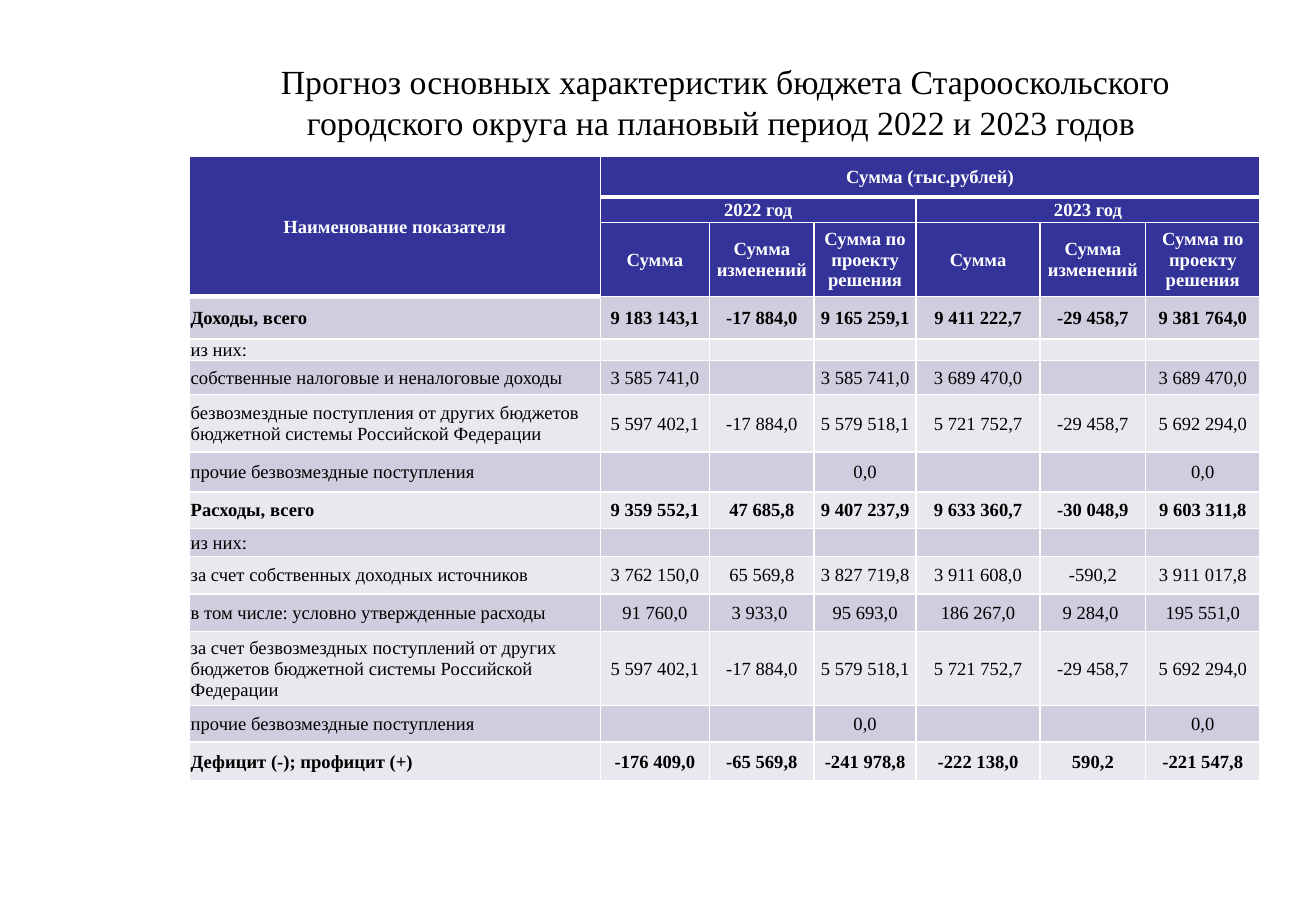
from lxml.etree import SubElement
from pptx import Presentation
from pptx.dml.color import RGBColor
from pptx.enum.text import MSO_ANCHOR, PP_ALIGN
from pptx.oxml.ns import qn
from pptx.util import Inches, Pt

FONT = "Times New Roman"
COLORS = {
    "header": "333399",
    "dark_band": "CECEDE",
    "light_band": "E8E8EF",
    "white": "FFFFFF",
    "black": "000000",
}
TITLE = ("Прогноз основных характеристик бюджета Старооскольского "
         "городского округа на плановый период 2022 и 2023 годов ")
COLUMN_WIDTHS = [3.38, 0.9, 0.86, 0.84, 1.02, 0.87, 0.94]
ROW_HEIGHTS = [0.33, 0.21, 0.61, 0.35, 0.06, 0.28, 0.47, 0.33,
               0.3, 0.23, 0.31, 0.31, 0.61, 0.3, 0.32]
YEAR_HEADINGS = ["Сумма", "Сумма изменений", "Сумма по проекту решения"]
HEADER_ROWS = [
    ["Наименование показателя", "Сумма (тыс.рублей)", "", "", "", "", ""],
    ["", "2022 год", "", "", "2023 год", "", ""],
    [""] + YEAR_HEADINGS * 2,
]
SUBHEADING = ["из них:"] + [""] * 6
OTHER_GRANTS = ["прочие безвозмездные поступления", "", "", "0,0", "", "", "0,0"]
GRANT_AMOUNTS = ["5 597 402,1", "-17 884,0", "5 579 518,1",
                 "5 721 752,7", "-29 458,7", "5 692 294,0"]
BUDGET_ROWS = [
    ["Доходы, всего", "9 183 143,1", "-17 884,0", "9 165 259,1",
     "9 411 222,7", "-29 458,7", "9 381 764,0"],
    SUBHEADING,
    ["собственные налоговые и неналоговые доходы", "3 585 741,0", "",
     "3 585 741,0", "3 689 470,0", "", "3 689 470,0"],
    ["безвозмездные поступления от других бюджетов бюджетной системы "
     "Российской Федерации"] + GRANT_AMOUNTS,
    OTHER_GRANTS,
    ["Расходы, всего", "9 359 552,1", "47 685,8", "9 407 237,9",
     "9 633 360,7", "-30 048,9", "9 603 311,8"],
    SUBHEADING,
    ["за счет собственных доходных источников", "3 762 150,0", "65 569,8",
     "3 827 719,8", "3 911 608,0", "-590,2", "3 911 017,8"],
    ["в том числе: условно утвержденные расходы", "91 760,0", "3 933,0 ",
     "95 693,0", "186 267,0", "9 284,0 ", "195 551,0"],
    ["за счет безвозмездных поступлений от других бюджетов бюджетной системы "
     "Российской Федерации"] + GRANT_AMOUNTS,
    OTHER_GRANTS,
    ["Дефицит (-); профицит (+)", "-176 409,0", "-65 569,8", "-241 978,8",
     "-222 138,0", "590,2", "-221 547,8"],
]
TOTAL_LABELS = {"Доходы, всего", "Расходы, всего", "Дефицит (-); профицит (+)"}
MERGES = [(0, 0, 2, 0), (0, 1, 0, 6), (1, 1, 1, 3), (1, 4, 1, 6)]


def add_run(paragraph, text, size, color, bold=False):
    run = paragraph.add_run()
    run.text = text
    run.font.name = FONT
    run.font.size = Pt(size)
    run.font.bold = bold
    run.font.color.rgb = RGBColor.from_string(COLORS[color])


def border_width_below(row, column):
    """Thick rules close the top heading and the indicator heading."""
    return 3 if row == 0 or (row, column) == (2, 0) else 1


def set_borders(cell, top, bottom):
    properties = cell._tc.get_or_add_tcPr()
    for side, width in (("L", 1), ("R", 1), ("T", top), ("B", bottom)):
        line = SubElement(properties, qn(f"a:ln{side}"), w=str(Pt(width)))
        fill = SubElement(line, qn("a:solidFill"))
        SubElement(fill, qn("a:srgbClr"), val=COLORS["white"])


def style_cell(cell, text, fill, text_color, bold, alignment):
    cell.fill.solid()
    cell.fill.fore_color.rgb = RGBColor.from_string(COLORS[fill])
    cell.vertical_anchor = MSO_ANCHOR.MIDDLE
    cell.margin_left = cell.margin_right = cell.margin_top = Inches(0.01)
    cell.margin_bottom = 0
    paragraph = cell.text_frame.paragraphs[0]
    paragraph.alignment = alignment
    if text:
        add_run(paragraph, text, 11, text_color, bold)
    else:
        # An empty cell must not force its row to the default text height.
        SubElement(paragraph._p, qn("a:endParaRPr"), sz="1000")


def add_budget_table(slide):
    rows = HEADER_ROWS + BUDGET_ROWS
    table = slide.shapes.add_table(
        len(rows), len(COLUMN_WIDTHS), Inches(1.56), Inches(1.29),
        Inches(sum(COLUMN_WIDTHS)), Inches(sum(ROW_HEIGHTS))).table
    for column, width in zip(table.columns, COLUMN_WIDTHS):
        column.width = Inches(width)
    for row, height in zip(table.rows, ROW_HEIGHTS):
        row.height = Inches(height)
    for top, left, bottom, right in MERGES:
        table.cell(top, left).merge(table.cell(bottom, right))

    for r, texts in enumerate(rows):
        is_header = r < len(HEADER_ROWS)
        band = "dark_band" if r % 2 else "light_band"
        for c, text in enumerate(texts):
            cell = table.cell(r, c)
            set_borders(cell, border_width_below(r - 1, c), border_width_below(r, c))
            style_cell(
                cell, text,
                fill="header" if is_header else band,
                text_color="white" if is_header else "black",
                bold=is_header or texts[0] in TOTAL_LABELS,
                alignment=PP_ALIGN.CENTER if is_header or c else PP_ALIGN.LEFT)


def add_title(slide):
    frame = slide.shapes.add_textbox(
        Inches(1.56), Inches(0.21), Inches(8.82), Inches(1.25)).text_frame
    frame.word_wrap = True
    frame.vertical_anchor = MSO_ANCHOR.MIDDLE
    paragraph = frame.paragraphs[0]
    paragraph.alignment = PP_ALIGN.CENTER
    add_run(paragraph, TITLE, 20, "black")


def main():
    presentation = Presentation()
    presentation.slide_width = Inches(10.83)
    presentation.slide_height = Inches(7.5)
    slide = presentation.slides.add_slide(presentation.slide_layouts[6])
    add_budget_table(slide)
    add_title(slide)
    presentation.save("out.pptx")


if __name__ == "__main__":
    main()
